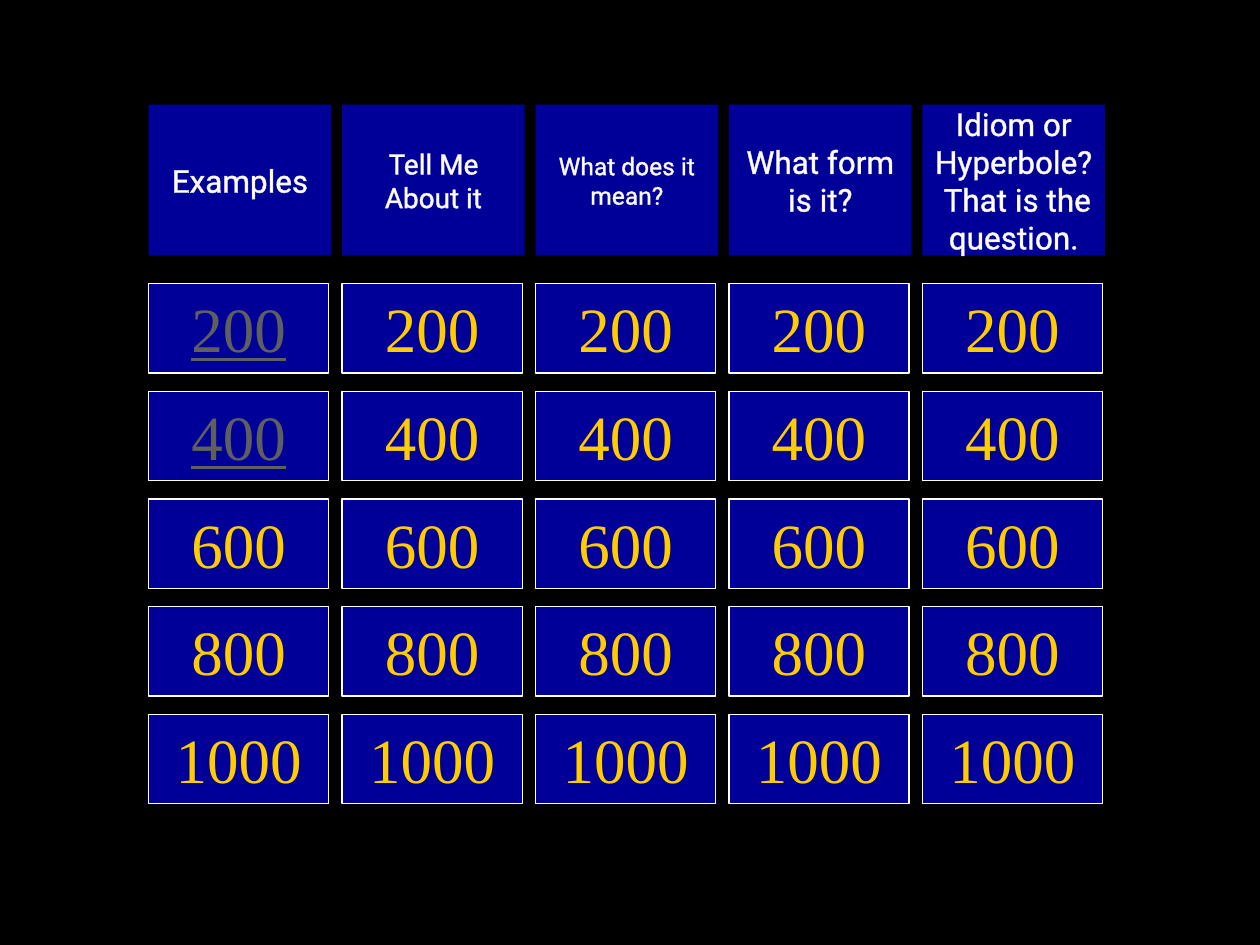
"""Build a quiz board with five topics and five rows of point values."""
from dataclasses import dataclass

from lxml import etree
from pptx import Presentation
from pptx import util as u
from pptx.dml import color
from pptx.enum import shapes, text
from pptx.oxml import ns

HUES = {
    "back": "000000",
    "tile": "000099",
    "white": "FFFFFF",
    "gold": "FFCC00",
    "used": "5F5F5F",
    "edge": "DDDDDD",
}
LEFT, STEP = 1.18, 1.535
TOP, DROP = 2.25, 0.855


@dataclass
class Tile:
    words: str
    left: float
    top: float
    width: float
    height: float
    size: int
    font: str
    hue: str
    edge: str
    lead: bool = True
    points: bool = False


def rgb(name: str) -> color.RGBColor:
    """Look up a named colour."""
    return color.RGBColor.from_string(HUES[name])


def add_lead(para) -> None:
    """Put half a line of space before a paragraph."""
    props = para._p.get_or_add_pPr()
    space = etree.SubElement(props, ns.qn("a:spcBef"))
    etree.SubElement(space, ns.qn("a:spcPct"), val="50000")


def add_edge(run, hue: str) -> None:
    """Outline the letters of a run."""
    line = etree.Element(ns.qn("a:ln"), w=str(u.Pt(0.75)))
    fill = etree.SubElement(line, ns.qn("a:solidFill"))
    etree.SubElement(fill, ns.qn("a:srgbClr"), val=HUES[hue])
    run.font._element.insert(0, line)


def draw_tile(slide, tile: Tile) -> None:
    """Draw one topic or point tile."""
    box = slide.shapes.add_shape(
        shapes.MSO_SHAPE.RECTANGLE,
        u.Inches(tile.left), u.Inches(tile.top),
        u.Inches(tile.width), u.Inches(tile.height),
    )
    box.shadow.inherit = False
    box.fill.solid()
    box.fill.fore_color.rgb = rgb("tile")
    frame = box.text_frame
    frame.word_wrap = True
    if tile.points:
        box.line.color.rgb = rgb("white")
        box.line.width = u.Pt(0.75)
        frame.vertical_anchor = text.MSO_ANCHOR.TOP
        frame.auto_size = text.MSO_AUTO_SIZE.SHAPE_TO_FIT_TEXT
    else:
        box.line.fill.background()
        frame.vertical_anchor = text.MSO_ANCHOR.MIDDLE
    para = frame.paragraphs[0]
    para.alignment = text.PP_ALIGN.CENTER
    if tile.lead:
        add_lead(para)
    run = para.add_run()
    run.text = tile.words
    run.font.name = tile.font
    run.font.size = u.Pt(tile.size)
    run.font.color.rgb = rgb(tile.hue)
    if tile.hue == "used":
        run.font.underline = True
    add_edge(run, tile.edge)


def main() -> None:
    """Lay out the board and save it."""
    deck = Presentation()
    deck.slide_width, deck.slide_height = u.Inches(10), u.Inches(7.5)
    slide = deck.slides.add_slide(deck.slide_layouts[6])
    slide.background.fill.solid()
    slide.background.fill.fore_color.rgb = rgb("back")

    topics = [
        ("Examples", 18, True),
        ("Tell Me About it", 16, True),
        ("What does it mean?", 14, True),
        ("What form is it?", 18, True),
        ("Idiom or Hyperbole?  That is the question.", 18, False),
    ]
    for col, (words, size, lead) in enumerate(topics):
        draw_tile(slide, Tile(words, LEFT + col * STEP, 0.83, 1.45, 1.2,
                              size, "Roboto", "white", "edge", lead))

    used = {(0, 0), (1, 0)}
    for row, score in enumerate(range(200, 1001, 200)):
        for col in range(len(topics)):
            hue = "used" if (row, col) in used else "gold"
            draw_tile(slide, Tile(str(score), LEFT + col * STEP,
                                  TOP + row * DROP, 1.43, 0.71, 36,
                                  "Times New Roman", hue, "gold",
                                  points=True))
    deck.save("out.pptx")


if __name__ == "__main__":
    main()
